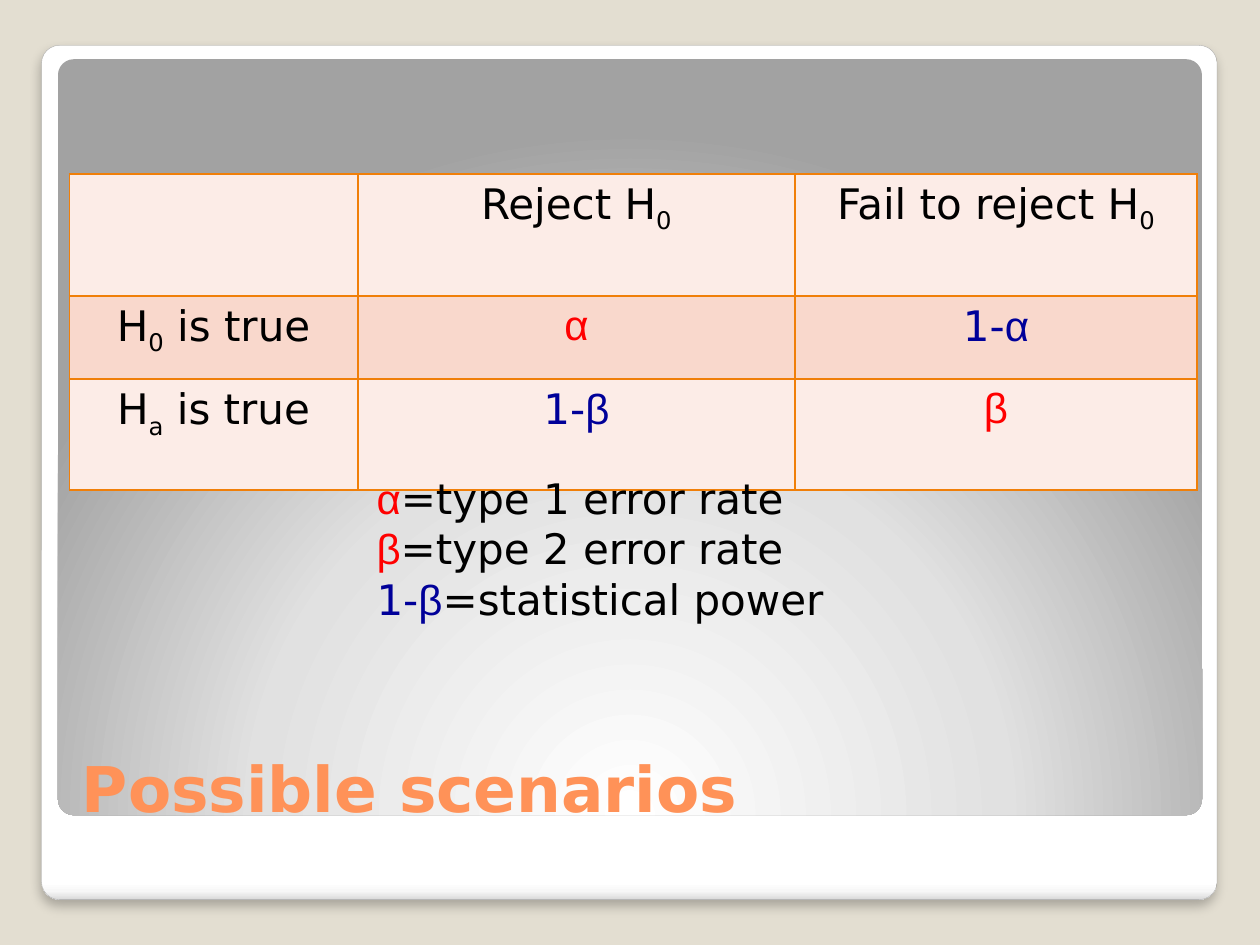
from pptx import Presentation
from pptx.dml.color import RGBColor
from pptx.enum.shapes import MSO_SHAPE
from pptx.enum.text import MSO_ANCHOR, PP_ALIGN
from pptx.oxml import parse_xml
from pptx.oxml.ns import nsdecls, qn
from pptx.util import Inches, Pt

BLACK = RGBColor(0x00, 0x00, 0x00)
RED = RGBColor(0xFF, 0x00, 0x00)
NAVY = RGBColor(0x00, 0x00, 0x99)
ORANGE = RGBColor(0xFF, 0x92, 0x58)
BORDER = RGBColor(0xF0, 0x7F, 0x09)
PALE = RGBColor(0xFC, 0xEC, 0xE7)
PINK = RGBColor(0xF9, 0xD8, 0xCC)
SAND = RGBColor(0xE3, 0xDE, 0xD1)
EDGE = RGBColor(0xA4, 0xA4, 0xA4)
LATIN, GREEK = "DejaVu Sans", "Arial"

TITLE = "Possible scenarios"
ROWS = [
    [[], [("Reject H", BLACK), ("0", BLACK, "sub")],
     [("Fail to reject H", BLACK), ("0", BLACK, "sub")]],
    [[("H", BLACK), ("0", BLACK, "sub"), (" is true", BLACK)],
     [("α", RED)], [("1-", NAVY), ("α", NAVY)]],
    [[("H", BLACK), ("a", BLACK, "sub"), (" is true", BLACK)],
     [("1-", NAVY), ("β", NAVY)], [("β", RED)]],
]
LEGEND = [
    [("α", RED), ("=type 1 error rate", BLACK)],
    [("β", RED), ("=type 2 error rate", BLACK)],
    [("1-", NAVY), ("β", NAVY), ("=statistical power", BLACK)],
]
COLUMN_WIDTHS = [2.29, 3.47, 3.19]
ROW_HEIGHTS = [0.97, 0.66, 0.88]
ROW_FILLS = [PALE, PINK, PALE]
CARD_STOPS = [(0, "FFFFFF"), (98, "FFFFFF"), (99, "F7F7F7"), (100, "DADADA")]
PANEL_STOPS = [(0, "FFFFFF"), (55, "E1E1E1"), (100, "A2A2A2")]
DOWNWARD = '<a:lin ang="5400000" scaled="0"/>'
RADIAL = ('<a:path path="circle"><a:fillToRect l="50000" t="175000" '
          'r="50000" b="-75000"/></a:path>')


def inches(*values):
    return [Inches(value) for value in values]


def write(para, spans):
    for text, color, *script in spans:
        span = para.add_run()
        span.text = text
        font = {"name": GREEK if text in "αβ" else LATIN, "size": Pt(24)}
        for name, value in font.items():
            setattr(span.font, name, value)
        span.font.color.rgb = color
        if script:
            span.font._element.set("baseline", "-25000")


def add_rounded(page, place, stops, direction):
    shape = page.shapes.add_shape(MSO_SHAPE.ROUNDED_RECTANGLE, *inches(*place))
    shape.adjustments[0] = 0.021
    shape.shadow.inherit = False
    shape.line.fill.background()
    marks = "".join(f'<a:gs pos="{stop * 1000}"><a:srgbClr val="{color}"/></a:gs>'
                    for stop, color in stops)
    gradient = parse_xml(f'<a:gradFill {nsdecls("a")} rotWithShape="1">'
                         f'<a:gsLst>{marks}</a:gsLst>{direction}</a:gradFill>')
    shape._element.spPr.find(qn("a:prstGeom")).addnext(gradient)
    return shape


def add_borders(cell):
    properties = cell._tc.get_or_add_tcPr()
    for index, side in enumerate(("lnL", "lnR", "lnT", "lnB")):
        properties.insert(index, parse_xml(
            f'<a:{side} {nsdecls("a")} w="12700"><a:solidFill>'
            f'<a:srgbClr val="{BORDER}"/></a:solidFill></a:{side}>'))


def add_scenarios(page):
    place = inches(0.55, 1.38, sum(COLUMN_WIDTHS), sum(ROW_HEIGHTS))
    table = page.shapes.add_table(len(ROWS), len(COLUMN_WIDTHS), *place).table
    table.first_row = table.horz_banding = False
    for column, width in zip(table.columns, COLUMN_WIDTHS):
        column.width = Inches(width)
    for row, height, fill, contents in zip(table.rows, ROW_HEIGHTS, ROW_FILLS, ROWS):
        row.height = Inches(height)
        for cell, spans in zip(row.cells, contents):
            cell.fill.solid()
            cell.fill.fore_color.rgb = fill
            add_borders(cell)
            para = cell.text_frame.paragraphs[0]
            para.alignment = PP_ALIGN.CENTER
            write(para, spans)


def add_legend(page):
    box = page.shapes.add_textbox(*inches(2.89, 3.7, 3.79, 1.72))
    frame = box.text_frame
    frame.word_wrap = False
    for index, spans in enumerate(LEGEND):
        write(frame.add_paragraph() if index else frame.paragraphs[0], spans)


def set_title(page):
    title = page.shapes.title
    place = inches(0.55, 5.45, 8.95, 1.15)
    for name, value in zip(("left", "top", "width", "height"), place):
        setattr(title, name, value)
    title.text_frame.vertical_anchor = MSO_ANCHOR.BOTTOM
    para = title.text_frame.paragraphs[0]
    para.alignment = PP_ALIGN.LEFT
    span = para.add_run()
    span.text = TITLE
    for name, value in {"name": LATIN, "size": Pt(36), "bold": True}.items():
        setattr(span.font, name, value)
    span.font.color.rgb = ORANGE
    page.shapes._spTree.append(title._element)


def main():
    deck = Presentation()
    deck.slide_width, deck.slide_height = inches(10, 7.5)
    page = deck.slides.add_slide(deck.slide_layouts[5])
    page.background.fill.solid()
    page.background.fill.fore_color.rgb = SAND
    card = add_rounded(page, (0.33, 0.36, 9.33, 6.78), CARD_STOPS, DOWNWARD)
    card.line.color.rgb = EDGE
    card.line.width = Pt(0.16)
    card._element.spPr.find(qn("a:effectLst")).append(parse_xml(
        f'<a:outerShdw {nsdecls("a")} blurRad="{Pt(6)}" dist="{Pt(4)}" dir="5400000">'
        '<a:srgbClr val="000000"><a:alpha val="25000"/></a:srgbClr></a:outerShdw>'))
    add_rounded(page, (0.46, 0.47, 9.08, 6), PANEL_STOPS, RADIAL)
    set_title(page)
    add_scenarios(page)
    add_legend(page)
    deck.save("out.pptx")


if __name__ == "__main__":
    main()
